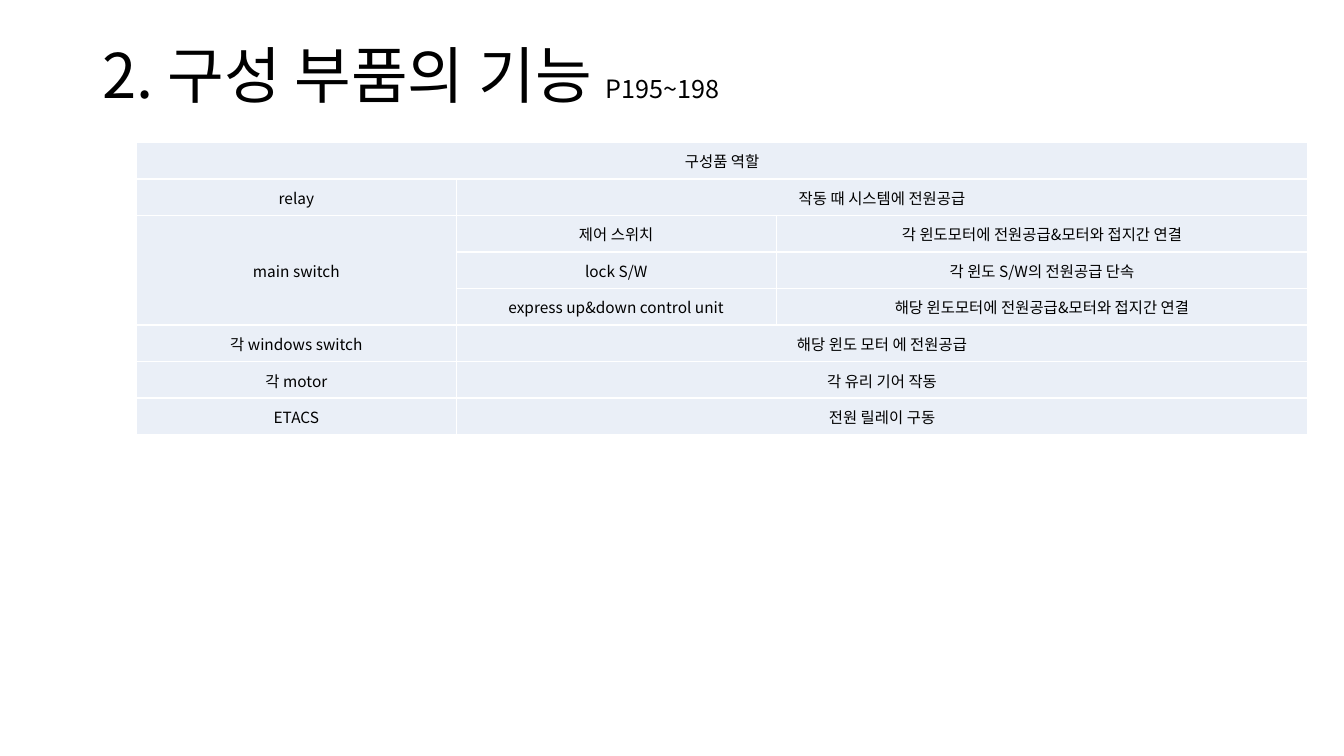
from lxml.etree import SubElement
from pptx import Presentation
from pptx.dml.color import RGBColor
from pptx.enum.text import MSO_ANCHOR, PP_ALIGN
from pptx.oxml.ns import qn
from pptx.util import Cm, Pt

FONT = "Noto Sans CJK KR"
COLORS = {"text": "000000", "cell": "EAEFF7", "border": "FFFFFF"}
COLUMN_WIDTHS = (8.06, 8.06, 13.4)
ROW_HEIGHT = 0.92

# An empty cell joins the cell to its left; None joins the cell above.
PART_ROLES = [
    ("구성품 역할", "", ""),
    ("relay", "작동 때 시스템에 전원공급", ""),
    ("main switch", "제어 스위치", "각 윈도모터에 전원공급&모터와 접지간 연결"),
    (None, "lock S/W", "각 윈도 S/W의 전원공급 단속"),
    (None, "express up&down control unit", "해당 윈도모터에 전원공급&모터와 접지간 연결"),
    ("각 windows switch", "해당 윈도 모터 에 전원공급", ""),
    ("각 motor", "각 유리 기어 작동", ""),
    ("ETACS", "전원 릴레이 구동", ""),
]


def add_text(paragraph, text, size, align=PP_ALIGN.LEFT, color="text"):
    paragraph.alignment = align
    run = paragraph.add_run()
    run.text = text
    run.font.size = Pt(size)
    run.font.name = FONT
    run.font.color.rgb = RGBColor.from_string(COLORS[color])
    SubElement(run.font._element, qn("a:ea"), typeface=FONT)


def add_heading(slide, left, top, width, height):
    frame = slide.shapes.add_textbox(Cm(left), Cm(top), Cm(width), Cm(height)).text_frame
    frame.word_wrap = True
    frame.vertical_anchor = MSO_ANCHOR.MIDDLE
    heading = frame.paragraphs[0]
    heading.line_spacing = 0.9
    add_text(heading, "2. 구성 부품의 기능 ", size=44)
    add_text(heading, "P195~198", size=18)


def style_cell(cell):
    """Give the cell its borders, fill, margins and anchor."""
    properties = cell._tc.get_or_add_tcPr()
    for side in ("lnL", "lnR", "lnT", "lnB"):
        border = SubElement(properties, qn(f"a:{side}"), w=str(Pt(1)))
        fill = SubElement(border, qn("a:solidFill"))
        SubElement(fill, qn("a:srgbClr"), val=COLORS["border"])
    cell.fill.solid()
    cell.fill.fore_color.rgb = RGBColor.from_string(COLORS["cell"])
    cell.margin_left = cell.margin_right = cell.margin_top = Cm(0.02)
    cell.margin_bottom = 0
    cell.vertical_anchor = MSO_ANCHOR.MIDDLE


def merge_cells(table):
    """Join each labelled cell with the empty ones to its right or below."""
    for r, labels in enumerate(PART_ROLES):
        for c, label in enumerate(labels):
            if not label:
                continue
            last_row, last_column = r, c
            while last_column + 1 < len(labels) and labels[last_column + 1] == "":
                last_column += 1
            while last_row + 1 < len(PART_ROLES) and PART_ROLES[last_row + 1][c] is None:
                last_row += 1
            if (last_row, last_column) != (r, c):
                table.cell(r, c).merge(table.cell(last_row, last_column))


def add_role_table(slide, left, top):
    row_count = len(PART_ROLES)
    table = slide.shapes.add_table(
        row_count, len(COLUMN_WIDTHS), Cm(left), Cm(top),
        Cm(sum(COLUMN_WIDTHS)), Cm(ROW_HEIGHT * row_count)).table
    table.first_row = table.horz_banding = False
    for column, width in zip(table.columns, COLUMN_WIDTHS):
        column.width = Cm(width)
    for row, labels in zip(table.rows, PART_ROLES):
        row.height = Cm(ROW_HEIGHT)
        for cell, label in zip(row.cells, labels):
            style_cell(cell)
            if label:
                add_text(cell.text_frame.paragraphs[0], label, size=11, align=PP_ALIGN.CENTER)
    merge_cells(table)


def main():
    presentation = Presentation()
    presentation.slide_width, presentation.slide_height = Cm(33.87), Cm(19.05)
    slide = presentation.slides.add_slide(presentation.slide_layouts[6])
    add_heading(slide, left=2.33, top=1.01, width=24.08, height=1.96)
    add_role_table(slide, left=3.44, top=3.59)
    presentation.save("out.pptx")


if __name__ == "__main__":
    main()
